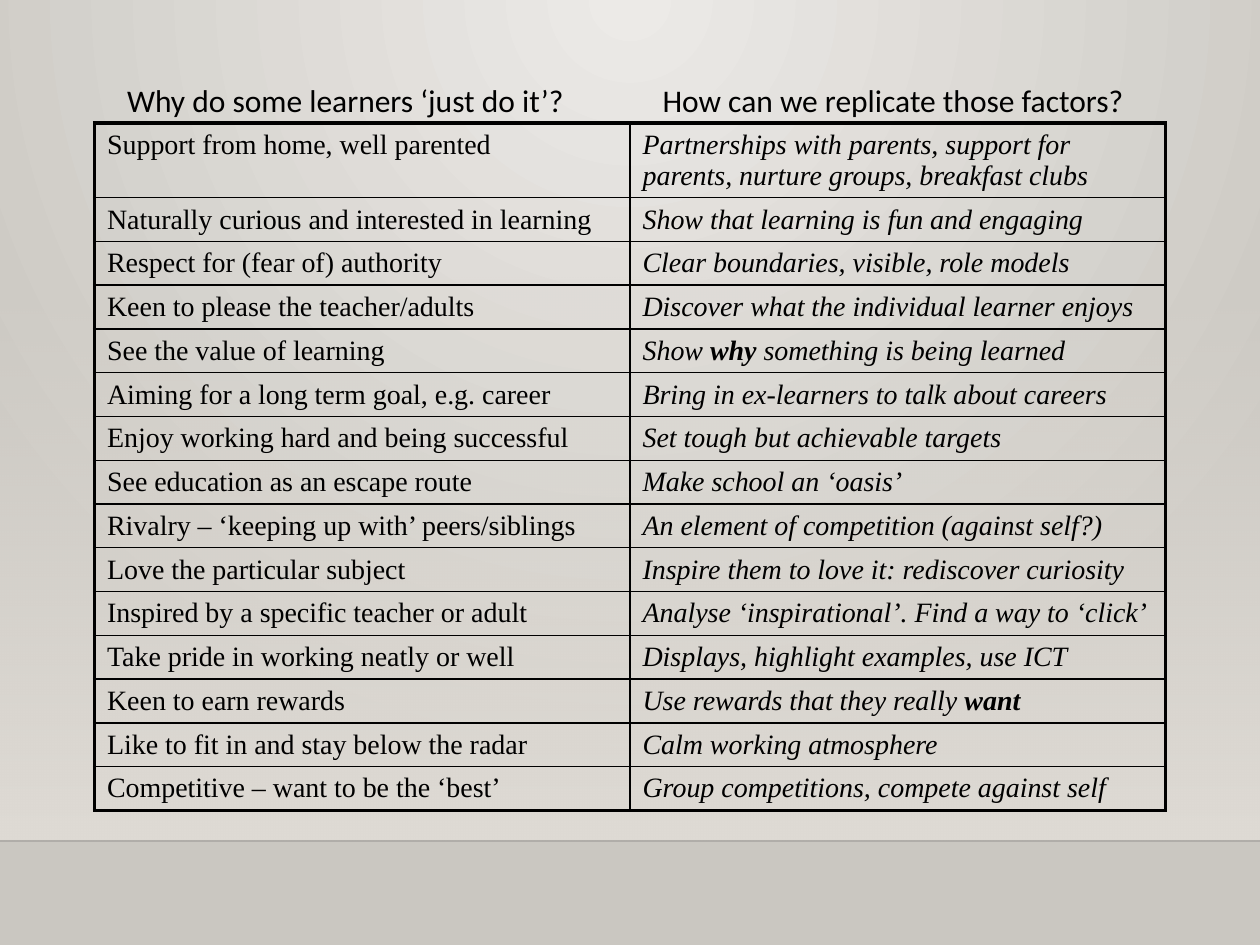
from lxml.etree import SubElement
from pptx import Presentation
from pptx.dml.color import RGBColor
from pptx.enum.shapes import MSO_CONNECTOR, MSO_SHAPE
from pptx.oxml import parse_xml
from pptx.oxml.ns import nsdecls, qn
from pptx.util import Inches, Pt

WIDTH, HEIGHT = Inches(10), Inches(7.5)
COLORS = {"ink": "000000", "glow": "ECEAE7", "floor": "CAC7C1", "wall": "DFDBD5", "edge": "000001"}
OUTER, INNER = 2.25, 1
LEFT, COLUMN = 0.075, 0.425
HEADING_TOP, TABLE_TOP, FLOOR_TOP = 0.079, 0.13, 0.89
WALL_TOP = 0.293

HEADINGS = ["Why do some learners ‘just do it’?", "How can we replicate those factors?"]
FACTORS = [
    ("Support from home, well parented",
     "Partnerships with parents, support for parents, nurture groups, breakfast clubs"),
    ("Naturally curious and interested in learning", "Show that learning is fun and engaging"),
    ("Respect for (fear of) authority", "Clear boundaries, visible, role models"),
    ("Keen to please the teacher/adults", "Discover what the individual learner enjoys"),
    ("See the value of learning", "Show *why *something is being learned"),
    ("Aiming for a long term goal, e.g. career", "Bring in ex-learners to talk about careers"),
    ("Enjoy working hard and being successful", "Set tough but achievable targets"),
    ("See education as an escape route", "Make school an ‘oasis’"),
    ("Rivalry – ‘keeping up with’ peers/siblings", "An element of competition (against self?)"),
    ("Love the particular subject", "Inspire them to love it: rediscover curiosity"),
    ("Inspired by a specific teacher or adult", "Analyse ‘inspirational’. Find a way to ‘click’"),
    ("Take pride in working neatly or well", "Displays, highlight examples, use ICT"),
    ("Keen to earn rewards", "Use rewards that they really *want*"),
    ("Like to fit in and stay below the radar", "Calm working atmosphere"),
    ("Competitive – want to be the ‘best’", "Group competitions, compete against self"),
]


def across(share):
    return int(WIDTH * share)


def down(share):
    return int(HEIGHT * share)


def write(frame, text, size=16, font="Times New Roman", color="ink", italic=False):
    frame.word_wrap = True
    for index, part in enumerate(text.split("*")):
        if part:
            run = frame.paragraphs[0].add_run()
            run.text = part
            run.font.size = Pt(size)
            run.font.name = font
            run.font.italic = italic
            run.font.bold = index % 2 == 1
            run.font.color.rgb = RGBColor.from_string(COLORS[color])


def gradient(start, end, direction, start_alpha=100):
    return parse_xml(
        f'<a:gradFill {nsdecls("a")} rotWithShape="1"><a:gsLst>'
        f'<a:gs pos="0"><a:srgbClr val="{COLORS[start]}"><a:alpha val="{start_alpha * 1000}"/></a:srgbClr></a:gs>'
        f'<a:gs pos="100000"><a:srgbClr val="{COLORS[end]}"/></a:gs>'
        f'</a:gsLst>{direction}</a:gradFill>')


def swap_fill(fill, parent, new_fill):
    fill.gradient()
    parent.replace(parent.find(qn("a:gradFill")), new_fill)


def paint_background(slide):
    circle = ('<a:path path="circle"><a:fillToRect l="43000" t="0" r="43000" b="100000"/></a:path>')
    fill = slide.background.fill
    properties = slide.element.cSld.get_or_add_bgPr()
    swap_fill(fill, properties, gradient("glow", "floor", circle))


def add_wall(slide):
    wall = slide.shapes.add_shape(
        MSO_SHAPE.RECTANGLE, 0, down(WALL_TOP), WIDTH, down(FLOOR_TOP - WALL_TOP))
    wall.shadow.inherit = False
    wall.line.fill.background()
    downward = '<a:lin ang="5400000" scaled="0"/>'
    swap_fill(wall.fill, wall.element.spPr, gradient("wall", "wall", downward, start_alpha=0))


def add_floor_edge(slide):
    edge = slide.shapes.add_connector(
        MSO_CONNECTOR.STRAIGHT, 0, down(FLOOR_TOP), WIDTH, down(FLOOR_TOP))
    edge.line.width = Pt(1)
    edge.line.color.rgb = RGBColor.from_string(COLORS["edge"])
    properties = edge.element.spPr
    SubElement(properties.find(".//" + qn("a:srgbClr")), qn("a:alpha"), val="20000")
    SubElement(properties, qn("a:effectLst"))


def add_border(cell, side, width):
    line = SubElement(cell._tc.get_or_add_tcPr(), qn(f"a:ln{side}"), w=str(Pt(width)))
    solid = SubElement(line, qn("a:solidFill"))
    SubElement(solid, qn("a:srgbClr"), val=COLORS["ink"])


def add_factors(slide):
    rows, columns = len(FACTORS), len(HEADINGS)
    table = slide.shapes.add_table(
        rows, columns, across(LEFT), down(TABLE_TOP),
        across(COLUMN * columns), Inches(0.3) * rows).table
    table.first_row = table.horz_banding = False
    for row, factor in enumerate(FACTORS):
        for column, text in enumerate(factor):
            cell = table.cell(row, column)
            write(cell.text_frame, text, italic=column == 1)
            on_rim = {"L": column == 0, "R": column == columns - 1,
                      "T": row == 0, "B": row == rows - 1}
            for side, outer in on_rim.items():
                add_border(cell, side, OUTER if outer else INNER)
            cell.fill.background()


def add_headings(slide):
    for column, heading in enumerate(HEADINGS):
        box = slide.shapes.add_textbox(
            across(LEFT + 0.016 + column * COLUMN), down(HEADING_TOP), across(0.409), Inches(0.4))
        write(box.text_frame, heading, size=18, font="Calibri")


def main():
    deck = Presentation()
    deck.slide_width, deck.slide_height = WIDTH, HEIGHT
    slide = deck.slides.add_slide(deck.slide_layouts[6])
    paint_background(slide)
    add_wall(slide)
    add_floor_edge(slide)
    add_factors(slide)
    add_headings(slide)
    deck.save("out.pptx")


if __name__ == "__main__":
    main()
